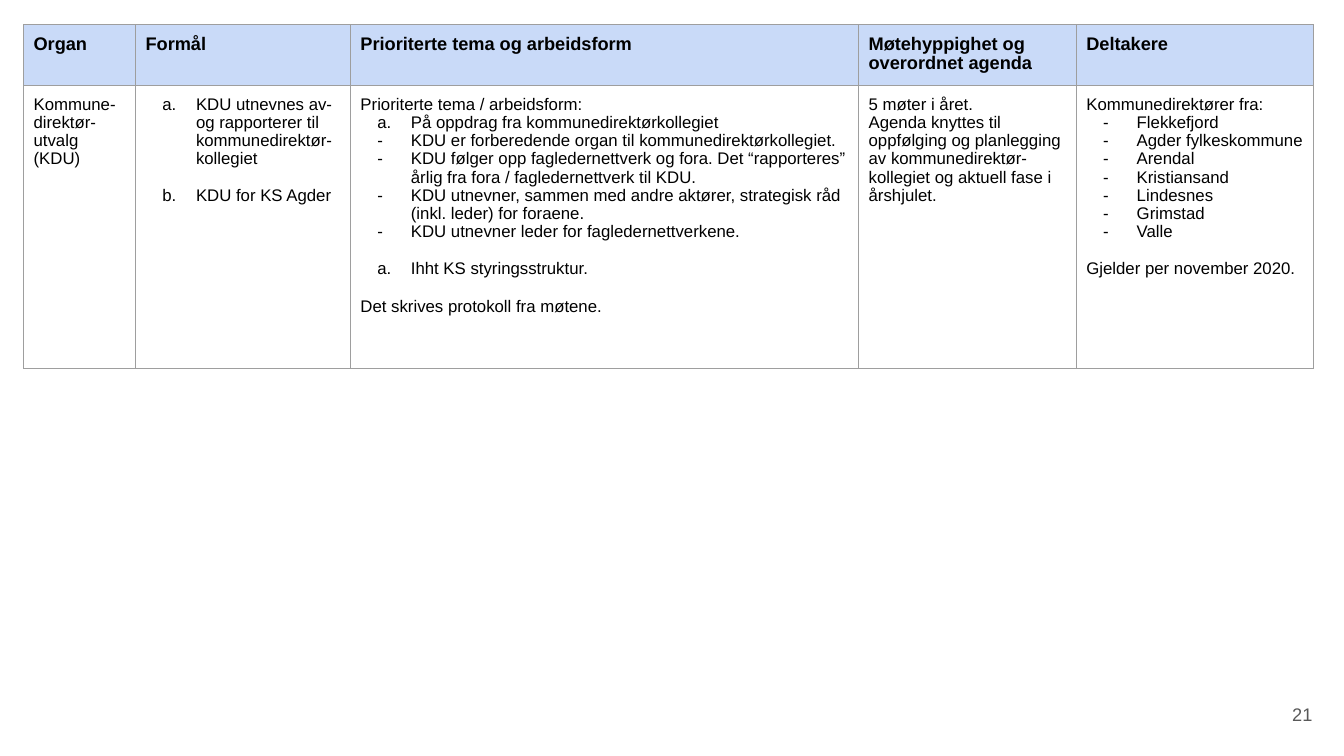
from lxml import etree
from pptx import Presentation
from pptx.dml.color import RGBColor
from pptx.enum import text
from pptx.oxml.ns import qn
from pptx.util import Pt

COLORS = {"header": "C9DAF8", "border": "9E9E9E", "ink": "000000", "number": "595959"}
FONT = "Arial"
LINE = 13.5
COLUMN_WIDTHS = [80, 153.5, 363, 155.5, 169.5]
ROW_HEIGHTS = [43.5, 202]
HEADERS = ["Organ", "Formål", "Prioriterte tema og arbeidsform",
           "Møtehyppighet og overordnet agenda", "Deltakere"]

# Each paragraph: marker ("", "a." or "-"), wording, space before
BODY = [
    [("", "Kommune- direktør- utvalg (KDU)", 0)],
    [("a.", "KDU utnevnes av- og rapporterer til kommunedirektør-kollegiet", 0),
     ("a.", "KDU for KS Agder", LINE)],
    [("", "Prioriterte tema / arbeidsform:", 0),
     ("a.", "På oppdrag fra kommunedirektørkollegiet", 0),
     ("-", "KDU er forberedende organ til kommunedirektørkollegiet.", 0),
     ("-", "KDU følger opp fagledernettverk og fora. Det “rapporteres” årlig fra fora / "
           "fagledernettverk til KDU.", 0),
     ("-", "KDU utnevner, sammen med andre aktører, strategisk råd (inkl. leder) for foraene.", 0),
     ("-", "KDU utnevner leder for fagledernettverkene.", 0),
     ("a.", "Ihht KS styringsstruktur.", LINE),
     ("", "Det skrives protokoll fra møtene.", LINE)],
    [("", "5 møter i året.", 0),
     ("", "Agenda knyttes til oppfølging og planlegging av kommunedirektør- kollegiet "
          "og aktuell fase i årshjulet.", 0)],
    [("", "Kommunedirektører fra:", 0)]
    + [("-", member, 0) for member in ("Flekkefjord", "Agder fylkeskommune", "Arendal",
                                       "Kristiansand", "Lindesnes", "Grimstad", "Valle")]
    + [("", "Gjelder per november 2020.", LINE)],
]


def rgb(name):
    return RGBColor.from_string(COLORS[name])


def add_run(p, words, size, color="ink", bold=False):
    r = p.add_run()
    r.text = words
    r.font.name, r.font.size, r.font.bold = FONT, Pt(size), bold
    r.font.color.rgb = rgb(color)


def set_marker(p, marker):
    """Give the paragraph a hanging indent with a letter or a dash."""
    pPr = p._p.get_or_add_pPr()
    pPr.set("marL", str(Pt(36)))
    pPr.set("indent", str(Pt(-24)))
    if marker == "a.":
        etree.SubElement(pPr, qn("a:buFont"), typeface=FONT)
        etree.SubElement(pPr, qn("a:buAutoNum"), type="alphaLcPeriod")
    else:
        etree.SubElement(pPr, qn("a:buFont"), typeface=FONT)
        etree.SubElement(pPr, qn("a:buChar"), char=marker)


def set_borders(cell):
    tcPr = cell._tc.get_or_add_tcPr()
    for i, side in enumerate(("lnL", "lnR", "lnT", "lnB")):
        ln = etree.Element(qn("a:" + side), w=str(Pt(0.75)))
        fill = etree.SubElement(ln, qn("a:solidFill"))
        etree.SubElement(fill, qn("a:srgbClr"), val=COLORS["border"])
        tcPr.insert(i, ln)


def fill_cell(cell, paragraphs, size, spacing, bold=False):
    cell.margin_left = cell.margin_right = cell.margin_top = cell.margin_bottom = Pt(7.2)
    tf = cell.text_frame
    for i, (marker, words, gap) in enumerate(paragraphs):
        p = tf.paragraphs[0] if i == 0 else tf.add_paragraph()
        p.line_spacing = spacing
        if gap:
            p.space_before = Pt(gap)
        if marker:
            set_marker(p, marker)
        add_run(p, words, size, bold=bold)


def add_organ_table(s):
    frame = s.shapes.add_table(2, len(HEADERS), Pt(16.8), Pt(17.5),
                               Pt(sum(COLUMN_WIDTHS)), Pt(sum(ROW_HEIGHTS)))
    table = frame.table
    table.horz_banding = False
    for row, height in zip(table.rows, ROW_HEIGHTS):
        row.height = Pt(height)
    for col, width in enumerate(COLUMN_WIDTHS):
        table.columns[col].width = Pt(width)
        head, body = table.cell(0, col), table.cell(1, col)
        head.fill.solid()
        head.fill.fore_color.rgb = rgb("header")
        body.fill.background()
        fill_cell(head, [("", HEADERS[col], 0)], 13, 0.95, bold=True)
        fill_cell(body, BODY[col], 12, 0.97)
        set_borders(head)
        set_borders(body)


def add_page_number(s, number):
    tf = s.shapes.add_textbox(Pt(889.2), Pt(489.6), Pt(57.6), Pt(41)).text_frame
    tf.word_wrap = True
    tf.vertical_anchor = text.MSO_ANCHOR.MIDDLE
    tf.margin_left = tf.margin_right = tf.margin_top = tf.margin_bottom = Pt(9.36)
    p = tf.paragraphs[0]
    p.alignment = text.PP_ALIGN.RIGHT
    add_run(p, number, 13, "number")


def main():
    prs = Presentation()
    prs.slide_width, prs.slide_height = Pt(960), Pt(540)
    s = prs.slides.add_slide(prs.slide_layouts[6])
    add_organ_table(s)
    add_page_number(s, "21")
    prs.save("out.pptx")


if __name__ == "__main__":
    main()
